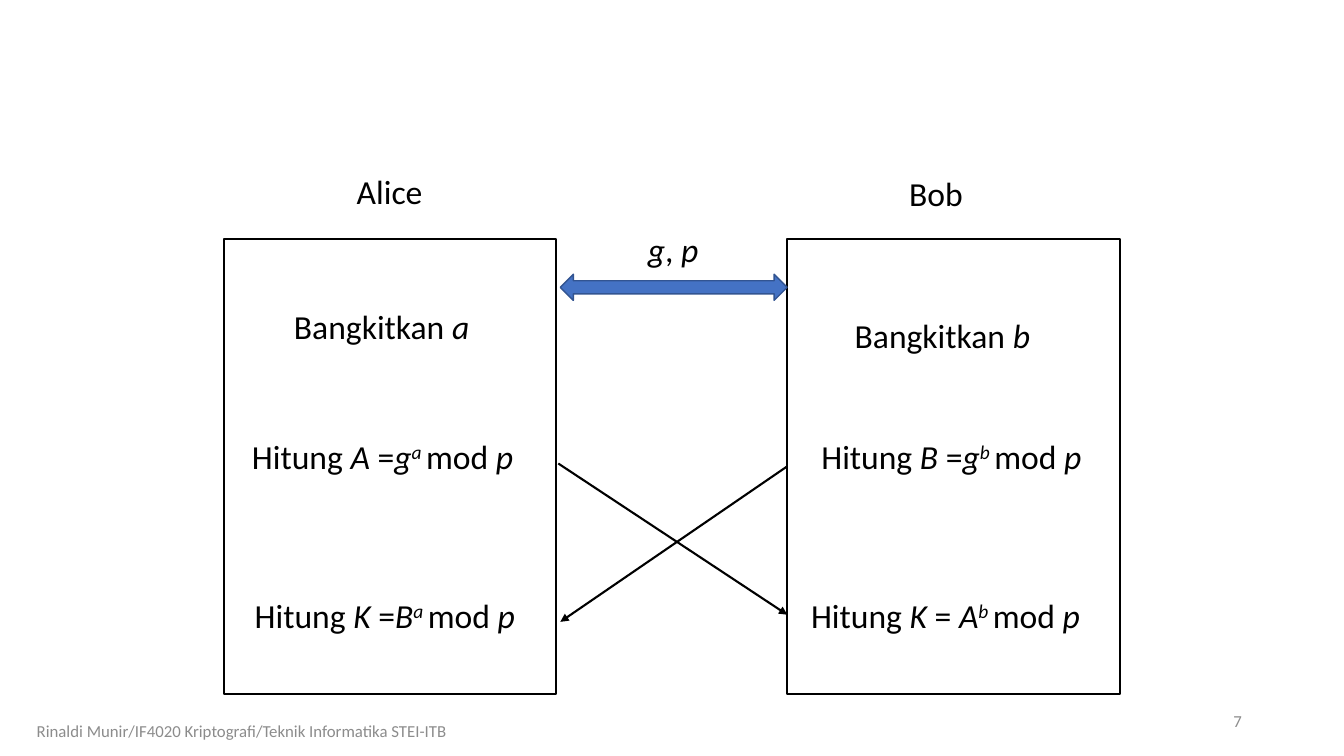
from dataclasses import dataclass
from typing import NamedTuple

from lxml import etree
from pptx import Presentation
from pptx.dml.color import RGBColor
from pptx.enum import shapes, text
from pptx.oxml.ns import qn
from pptx.util import Cm, Pt


@dataclass(frozen=True)
class Theme:
    font: str = "Calibri"
    body: int = 24
    small: int = 12
    ink: str = "000000"
    muted: str = "8C8C8C"
    arrow_fill: str = "4472C4"
    arrow_line: str = "325491"
    outline: float = 1.5
    arrow_outline: float = 1


class Piece(NamedTuple):
    words: str
    italic: bool = False
    raised: bool = False


class Label(NamedTuple):
    left: float
    top: float
    width: float
    pieces: list[Piece]


class Footer(NamedTuple):
    left: float
    top: float
    width: float
    words: str
    align: text.PP_ALIGN


class Message(NamedTuple):
    start: tuple[float, float]
    end: tuple[float, float]


THEME = Theme()
LABEL_HEIGHT = 1.27
FOOTER_HEIGHT = 1.02
BOX_TOP, BOX_WIDTH, BOX_HEIGHT = 6.02, 8.38, 11.46
ALICE_LEFT, BOB_LEFT = 5.64, 19.84
POWER_TOP, KEY_TOP = 10.87, 14.86


def generate(secret: str) -> list[Piece]:
    return [Piece("Bangkitkan "), Piece(secret, italic=True)]


def compute(result: str, equals: str, base: str, exponent: str) -> list[Piece]:
    return [
        Piece("Hitung "),
        Piece(result, italic=True),
        Piece(equals),
        Piece(base, italic=True),
        Piece(f"{exponent} ", italic=True, raised=True),
        Piece("mod "),
        Piece("p", italic=True),
    ]


LABELS = [
    Label(8.74, 4.19, 2.18, [Piece("Alice")]),
    Label(22.66, 4.22, 1.88, [Piece("Bob")]),
    Label(16.08, 5.64, 1.8, [Piece("g", italic=True), Piece(", "), Piece("p", italic=True)]),
    Label(7.16, 7.59, 4.98, generate("a")),
    Label(21.29, 7.8, 4.98, generate("b")),
    Label(6.1, POWER_TOP, 7.9, compute("A", " =", "g", "a")),
    Label(20.45, POWER_TOP, 7.87, compute("B", " =", "g", "b")),
    Label(6.17, KEY_TOP, 7.85, compute("K", " =", "B", "a")),
    Label(20.19, KEY_TOP, 8.08, compute("K", " = ", "A", "b")),
]
FOOTERS = [
    Footer(0.38, 17.91, 11.43, "Rinaldi Munir/IF4020 Kriptografi/Teknik Informatika STEI-ITB",
           text.PP_ALIGN.CENTER),
    Footer(23.93, 17.65, 7.62, "7", text.PP_ALIGN.RIGHT),
]
BOB_TO_ALICE = Message((BOB_LEFT, 11.75), (14.12, 15.67))
ALICE_TO_BOB = Message((14.07, 11.68), (BOB_LEFT, 15.49))


def set_line(line, color: str, width: float) -> None:
    line.color.rgb = RGBColor.from_string(color)
    line.width = Pt(width)


def set_font(font, size: int, color: str) -> None:
    font.name = THEME.font
    font.size = Pt(size)
    font.color.rgb = RGBColor.from_string(color)


def draw_box(slide, left: float):
    shape = slide.shapes.add_shape(shapes.MSO_SHAPE.RECTANGLE, Cm(left), Cm(BOX_TOP),
                                   Cm(BOX_WIDTH), Cm(BOX_HEIGHT))
    shape.shadow.inherit = False
    shape.fill.background()
    set_line(shape.line, THEME.ink, THEME.outline)
    return shape


def draw_exchange(slide) -> None:
    shape = slide.shapes.add_shape(shapes.MSO_SHAPE.LEFT_RIGHT_ARROW,
                                   Cm(14.12), Cm(6.91), Cm(5.72), Cm(0.66))
    shape.shadow.inherit = False
    shape.fill.solid()
    shape.fill.fore_color.rgb = RGBColor.from_string(THEME.arrow_fill)
    set_line(shape.line, THEME.arrow_line, THEME.arrow_outline)


def draw_label(slide, label: Label) -> None:
    shape = slide.shapes.add_textbox(Cm(label.left), Cm(label.top),
                                     Cm(label.width), Cm(LABEL_HEIGHT))
    frame = shape.text_frame
    frame.word_wrap = False
    frame.auto_size = text.MSO_AUTO_SIZE.SHAPE_TO_FIT_TEXT
    paragraph = frame.paragraphs[0]
    set_font(paragraph.font, THEME.body, THEME.ink)
    for piece in label.pieces:
        run = paragraph.add_run()
        run.text = piece.words
        run.font.italic = piece.italic
        if piece.raised:
            run._r.get_or_add_rPr().set("baseline", "30000")


def draw_footer(slide, footer: Footer) -> None:
    shape = slide.shapes.add_textbox(Cm(footer.left), Cm(footer.top),
                                     Cm(footer.width), Cm(FOOTER_HEIGHT))
    frame = shape.text_frame
    frame.word_wrap = True
    frame.vertical_anchor = text.MSO_ANCHOR.MIDDLE
    paragraph = frame.paragraphs[0]
    paragraph.text = footer.words
    paragraph.alignment = footer.align
    set_font(paragraph.font, THEME.small, THEME.muted)


def draw_message(slide, message: Message):
    connector = slide.shapes.add_connector(shapes.MSO_CONNECTOR.STRAIGHT,
                                           *map(Cm, message.start + message.end))
    set_line(connector.line, THEME.ink, THEME.outline)
    etree.SubElement(connector.line._get_or_add_ln(), qn("a:tailEnd"), type="triangle")
    etree.SubElement(connector._element.spPr, qn("a:effectLst"))
    return connector


def main() -> None:
    presentation = Presentation()
    presentation.slide_width = Cm(33.87)
    presentation.slide_height = Cm(19.05)
    slide = presentation.slides.add_slide(presentation.slide_layouts[6])
    draw_box(slide, ALICE_LEFT)
    bob_box = draw_box(slide, BOB_LEFT)
    draw_exchange(slide)
    for label in LABELS:
        draw_label(slide, label)
    draw_message(slide, BOB_TO_ALICE).begin_connect(bob_box, 1)
    draw_message(slide, ALICE_TO_BOB)
    for footer in FOOTERS:
        draw_footer(slide, footer)
    presentation.save("out.pptx")


if __name__ == "__main__":
    main()
